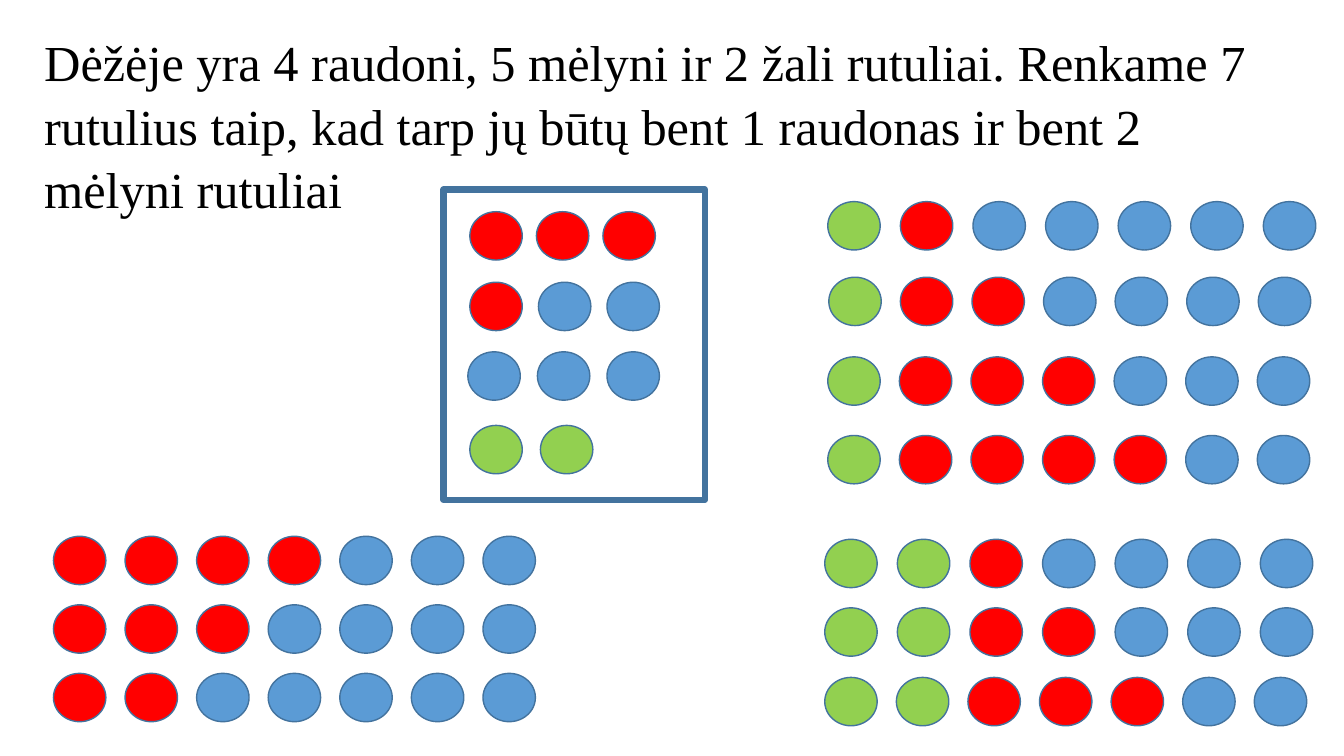
from pptx import Presentation
from pptx import util as u
from pptx.dml.color import RGBColor
from pptx.enum import shapes, text

PX = 9144  # 100 px to the inch
THEME = {
    "R": RGBColor.from_string("FF0000"),
    "B": RGBColor.from_string("5B9BD5"),
    "G": RGBColor.from_string("92D050"),
    "outline": RGBColor.from_string("43739E"),
    "box": RGBColor.from_string("FFFFFF"),
    "text": RGBColor.from_string("000000"),
    "font": "Times New Roman",
    "size": u.Pt(36),
}
BALL_WIDTH, BALL_HEIGHT = 52, 48


def add_outlined(group, kind, bounds, fill, line_width):
    shape = group.shapes.add_shape(kind, *(value * PX for value in bounds))
    shape.shadow.inherit = False
    shape.fill.solid()
    shape.fill.fore_color.rgb = fill
    shape.line.color.rgb = THEME["outline"]
    shape.line.width = u.Pt(line_width)


def add_ball_rows(group, rows):
    for left, top, pitch, colours in rows:
        for column, colour in enumerate(colours):
            bounds = (left + column * pitch, top, BALL_WIDTH, BALL_HEIGHT)
            add_outlined(group, shapes.MSO_SHAPE.OVAL, bounds, THEME[colour], 1)


presentation = Presentation()
presentation.slide_width = 1333 * PX
presentation.slide_height = 750 * PX
slide = presentation.slides.add_slide(presentation.slide_layouts[6])

# Problem statement
statement = slide.shapes.add_textbox(34 * PX, 23 * PX, 1243 * PX, 192 * PX)
frame = statement.text_frame
frame.word_wrap = True
frame.auto_size = text.MSO_AUTO_SIZE.SHAPE_TO_FIT_TEXT
frame.text = (
    "Dėžėje yra 4 raudoni, 5 mėlyni ir 2 žali rutuliai. Renkame 7 rutulius "
    "taip, kad tarp jų būtų bent 1 raudonas ir bent 2 mėlyni rutuliai"
)
paragraph = frame.paragraphs[0]
paragraph.line_spacing = 1.05
font = paragraph.runs[0].font
font.name = THEME["font"]
font.size = THEME["size"]
font.color.rgb = THEME["text"]

# Box with all the balls
box = slide.shapes.add_group_shape()
add_outlined(box, shapes.MSO_SHAPE.RECTANGLE, (440, 188, 259, 308), THEME["box"], 4.5)
add_ball_rows(box, [
    (466, 210, 66, "RRR"),
    (466, 280, 68, "RBB"),
    (464, 349, 69, "BBB"),
    (466, 422, 70, "GG"),
])

# Selections by number of green balls: left, top, pitch, colours of each row
selections = {
    "no green": [
        (53, 532, 71, "RRRRBBB"),
        (53, 600, 71, "RRRBBBB"),
        (53, 668, 71, "RRBBBBB"),
    ],
    "one green": [
        (821, 200, 72, "GRBBBBB"),
        (822, 275, 71, "GRRBBBB"),
        (821, 354, 71, "GRRRBBB"),
        (821, 432, 71, "GRRRRBB"),
    ],
    "two green": [
        (818, 535, 72, "GGRBBBB"),
        (818, 603, 72, "GGRRBBB"),
        (818, 672, 71, "GGRRRBB"),
    ],
}
for rows in selections.values():
    add_ball_rows(slide.shapes.add_group_shape(), rows)

presentation.save("out.pptx")
